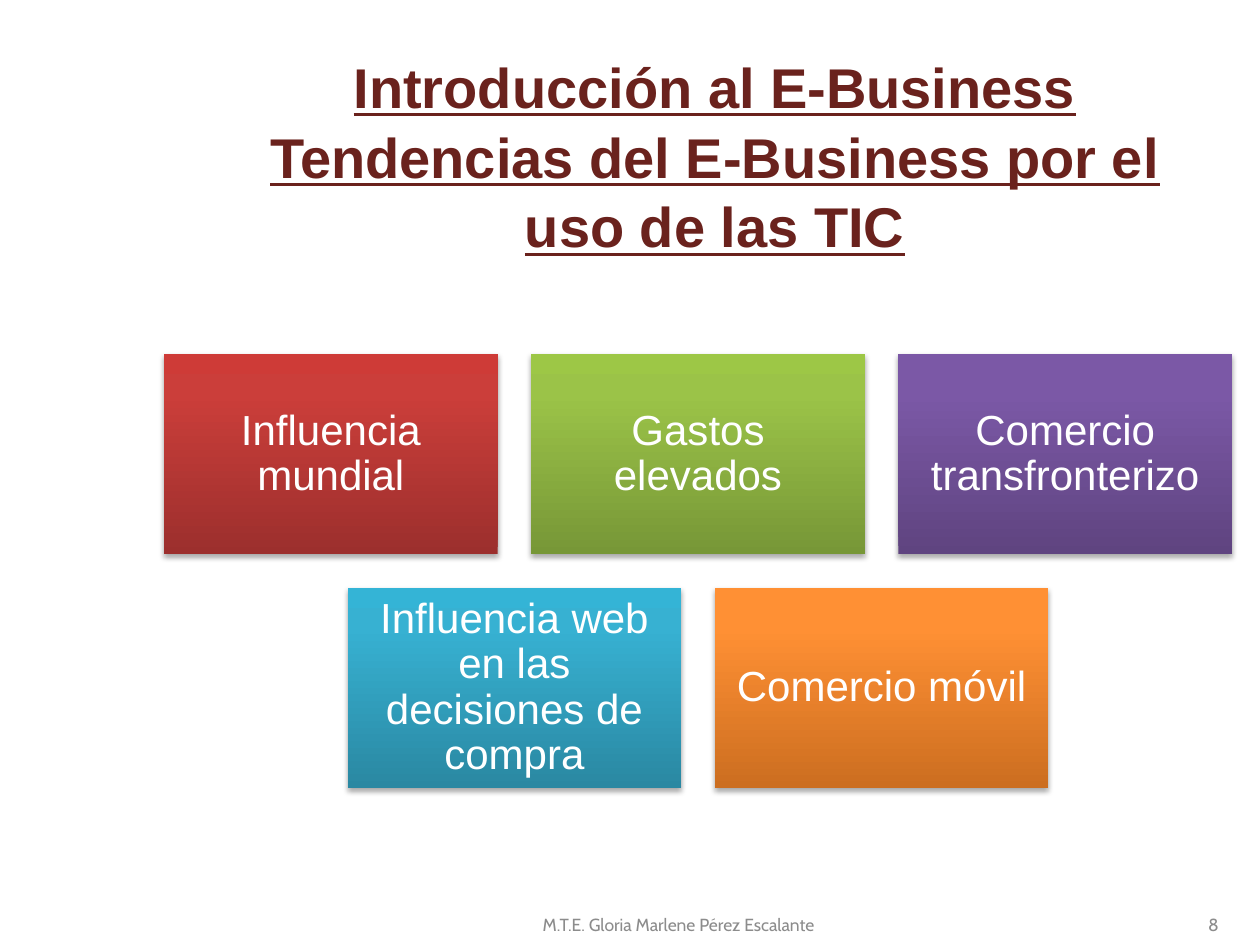
from copy import deepcopy

from lxml import etree
from pptx import Presentation
from pptx.dml.color import RGBColor
from pptx.enum import shapes, text
from pptx.oxml import ns
from pptx.util import Pt

TITLE = "Introducción al E-Business\vTendencias del E-Business por el uso de las TIC"
ROWS = [
    [
        ("Influencia mundial", ("9C2F2D", "CB3E3A", "CE3B37")),
        ("Gastos elevados", ("779737", "9BC348", "9DC746")),
        ("Comercio transfronterizo", ("5F4480", "7B58A6", "7C57A8")),
    ],
    [
        ("Influencia web en las decisiones de compra", ("2A88A2", "37B1D2", "34B4D6")),
        ("Comercio móvil", ("CC6E20", "FF9034", "FF9136")),
    ],
]
FOOTERS = [
    ("M.T.E. Gloria Marlene Pérez Escalante", 273.6, 228.2, text.PP_ALIGN.CENTER),
    ("8", 535.7, 167.8, text.PP_ALIGN.RIGHT),
]

MAROON = RGBColor(0x6A, 0x22, 0x1D)
GRAY = RGBColor(0x8C, 0x8C, 0x8C)
WHITE = RGBColor(0xFF, 0xFF, 0xFF)
BLACK = "000000"
STOPS = (0, 0.8, 1)

GRID_LEFT, GRID_TOP = 93.7, 202.3
BOX_W, BOX_H, GAP = 190.7, 114.4, 19.1


def write(tf, content, font, size, color, align):
    tf.word_wrap = True
    tf.auto_size = text.MSO_AUTO_SIZE.NONE
    tf.vertical_anchor = text.MSO_ANCHOR.MIDDLE
    tf.text = content
    p = tf.paragraphs[0]
    p.alignment = align
    p.font.name = font
    p.font.size = Pt(size)
    p.font.color.rgb = color
    return p


def fill_gradient(sp, colors):
    sp.fill.gradient()
    sp.fill.gradient_angle = 90
    gs_list = sp._element.spPr.find(".//" + ns.qn("a:gsLst"))
    gs_list.append(deepcopy(gs_list[0]))
    for stop, position, color in zip(sp.fill.gradient_stops, STOPS, colors):
        stop.position = position
        stop.color.rgb = RGBColor.from_string(color)


def add_shadow(sp):
    sp.shadow.inherit = False
    effects = sp._element.spPr.find(ns.qn("a:effectLst"))
    shadow = etree.SubElement(
        effects, ns.qn("a:outerShdw"), blurRad=str(Pt(3.1)), dist=str(Pt(1.8)),
        dir="5400000", rotWithShape="0")
    color = etree.SubElement(shadow, ns.qn("a:srgbClr"), val=BLACK)
    etree.SubElement(color, ns.qn("a:alpha"), val="35000")


def add_box(s, label, colors, left, top):
    sp = s.shapes.add_shape(
        shapes.MSO_SHAPE.RECTANGLE, Pt(left), Pt(top), Pt(BOX_W), Pt(BOX_H))
    fill_gradient(sp, colors)
    sp.line.fill.background()
    add_shadow(sp)
    tf = sp.text_frame
    tf.margin_left = tf.margin_right = tf.margin_top = tf.margin_bottom = Pt(7.2)
    p = write(tf, label, "Arial", 24, WHITE, text.PP_ALIGN.CENTER)
    p.line_spacing = 0.9


def main():
    prs = Presentation()
    prs.slide_width, prs.slide_height = Pt(720), Pt(540)
    s = prs.slides.add_slide(prs.slide_layouts[5])

    title = s.shapes.title
    title.left, title.top = Pt(133.2), Pt(43.2)
    title.width, title.height = Pt(550.8), Pt(90)
    p = write(title.text_frame, TITLE, "Arial", 32, MAROON, text.PP_ALIGN.CENTER)
    p.font.bold = True
    p.font.underline = True
    p.line_spacing = 1.04

    for content, left, width, align in FOOTERS:
        box = s.shapes.add_textbox(Pt(left), Pt(514.1), Pt(width), Pt(28.8))
        write(box.text_frame, content, "Cabin", 10, GRAY, align)

    columns = max(len(row) for row in ROWS)
    for i, row in enumerate(ROWS):
        indent = (columns - len(row)) * (BOX_W + GAP) / 2
        for j, (label, colors) in enumerate(row):
            left = GRID_LEFT + indent + j * (BOX_W + GAP)
            add_box(s, label, colors, left, GRID_TOP + i * (BOX_H + GAP))

    prs.save("out.pptx")


if __name__ == "__main__":
    main()
